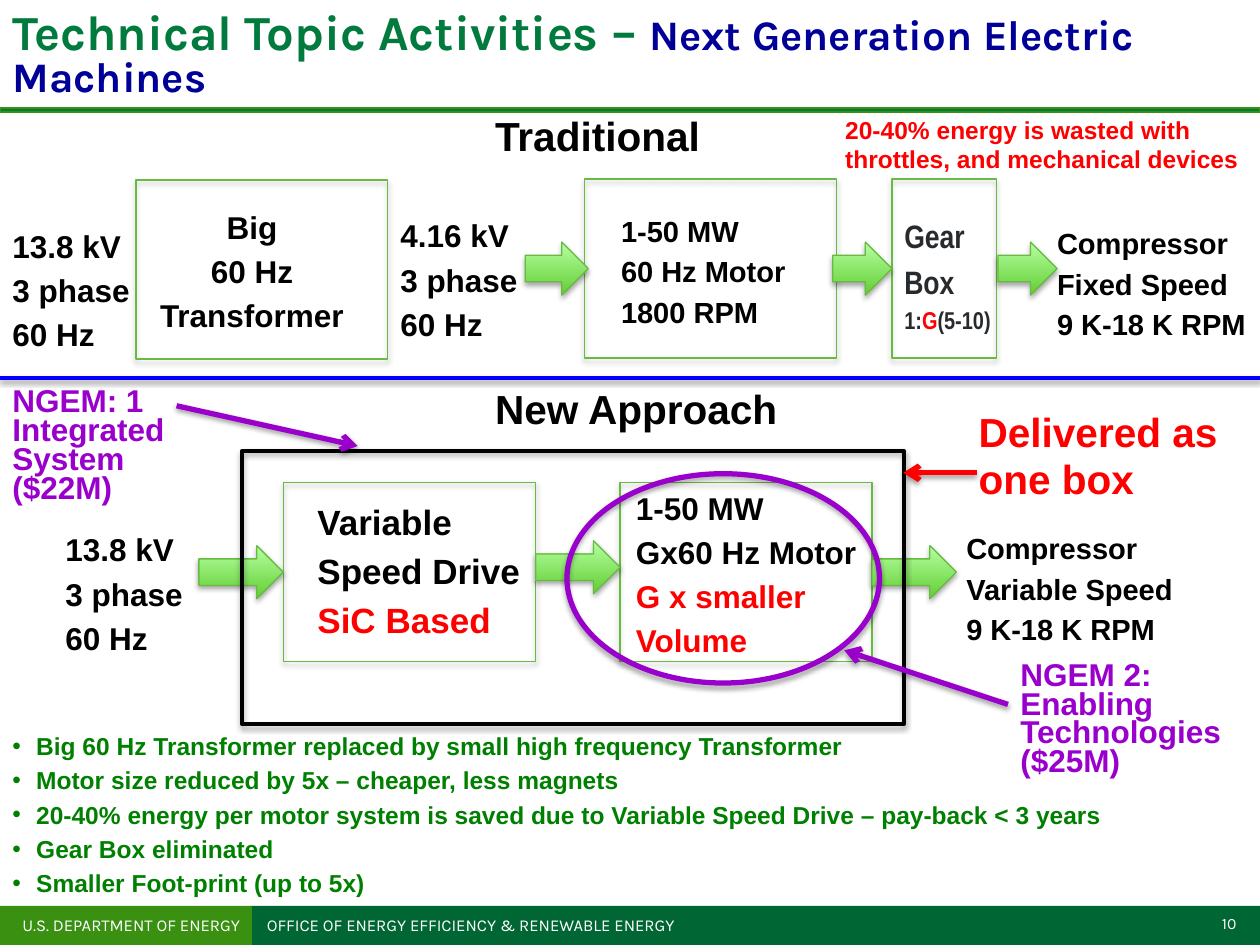
"""Build the slide that compares traditional and new electric machine drives."""
from dataclasses import dataclass
from typing import NamedTuple, Optional, Union

from lxml.etree import SubElement
from pptx import Presentation
from pptx.dml.color import RGBColor
from pptx.enum.shapes import MSO_CONNECTOR, MSO_SHAPE
from pptx.enum.text import MSO_ANCHOR, PP_ALIGN
from pptx.oxml.ns import qn
from pptx.util import Cm, Pt

BLACK = RGBColor(0x00, 0x00, 0x00)
WHITE = RGBColor(0xFF, 0xFF, 0xFF)
RED = RGBColor(0xFF, 0x00, 0x00)
BLUE = RGBColor(0x00, 0x00, 0xFF)
NAVY = RGBColor(0x00, 0x00, 0x99)
PURPLE = RGBColor(0x99, 0x00, 0xCC)
SLATE = RGBColor(0x28, 0x2B, 0x2E)
GREEN = RGBColor(0x00, 0x80, 0x00)
PINE = RGBColor(0x00, 0x66, 0x33)
JADE = RGBColor(0x01, 0x7A, 0x3E)
LEAF = RGBColor(0x3A, 0x90, 0x11)
EDGE = RGBColor(0x67, 0xBB, 0x41)
DEEP = RGBColor(0x63, 0xCE, 0x33)
PALE = RGBColor(0xB5, 0xFF, 0xA2)
GAP = 0.2


class Span(NamedTuple):
    text: str
    color: Optional[RGBColor] = None
    size: Optional[float] = None


Row = Union[str, tuple[Span, ...]]


@dataclass
class Note:
    x: float
    y: float
    w: float
    h: float
    rows: tuple[Row, ...]
    size: float = 18
    color: RGBColor = BLACK
    font: str = "Arial"
    bold: bool = True
    pitch: float = 1.0
    align: PP_ALIGN = PP_ALIGN.LEFT
    anchor: MSO_ANCHOR = MSO_ANCHOR.TOP
    wrap: bool = False
    bullet: bool = False
    tab: float = 0


@dataclass
class Form:
    x: float
    y: float
    w: float
    h: float
    kind: MSO_SHAPE = MSO_SHAPE.RECTANGLE
    fill: Optional[RGBColor] = None
    line: Optional[RGBColor] = EDGE
    width: float = 0.75
    shade: bool = True


@dataclass
class Link:
    start: tuple[float, float]
    end: tuple[float, float]
    color: RGBColor
    width: float = 3
    head: bool = True


def arrow(x: float, y: float, w: float) -> Form:
    """Describe a green flow arrow."""
    return Form(x, y, w, 1.07, MSO_SHAPE.RIGHT_ARROW)


def cast(item, dist: float, alpha: int) -> None:
    """Give a shape or connector a soft shadow below it."""
    effect = SubElement(item._element.spPr, qn("a:effectLst"))
    if alpha:
        outer = SubElement(effect, qn("a:outerShdw"), blurRad=str(Pt(3.1)), dist=str(Pt(dist)),
                           dir="5400000", algn="ctr", rotWithShape="0")
        tint = SubElement(outer, qn("a:srgbClr"), val=str(BLACK))
        SubElement(tint, qn("a:alpha"), val=str(alpha * 1000))


def draw_form(slide, form: Form) -> None:
    """Draw a box, arrow, ellipse or bar."""
    shape = slide.shapes.add_shape(form.kind, Cm(form.x), Cm(form.y), Cm(form.w), Cm(form.h))
    if form.kind == MSO_SHAPE.RIGHT_ARROW:
        shape.fill.gradient()
        shape.fill.gradient_angle = 90
        for stop, color in zip(shape.fill.gradient_stops, (DEEP, PALE)):
            stop.color.rgb = color
    elif form.fill is not None:
        shape.fill.solid()
        shape.fill.fore_color.rgb = form.fill
    else:
        shape.fill.background()
    if form.line is not None:
        shape.line.color.rgb = form.line
        shape.line.width = Pt(form.width)
    else:
        shape.line.fill.background()
    cast(shape, 1.8, 35 if form.shade else 0)


def draw_link(slide, link: Link) -> None:
    """Draw a straight line, with an arrowhead if wanted."""
    ends = [Cm(v) for v in link.start + link.end]
    line = slide.shapes.add_connector(MSO_CONNECTOR.STRAIGHT, *ends)
    line.line.color.rgb = link.color
    line.line.width = Pt(link.width)
    if link.head:
        SubElement(line.line._get_or_add_ln(), qn("a:tailEnd"), type="arrow")
    cast(line, 1.6, 38)


def draw_note(slide, note: Note) -> None:
    """Draw a text box row by row."""
    box = slide.shapes.add_textbox(Cm(note.x), Cm(note.y), Cm(note.w), Cm(note.h))
    frame = box.text_frame
    frame.word_wrap = note.wrap
    frame.vertical_anchor = note.anchor
    for i, row in enumerate(note.rows):
        para = frame.add_paragraph() if i else frame.paragraphs[0]
        props = para._p.get_or_add_pPr()
        if note.bullet:
            props.set("marL", str(Cm(0.48)))
            props.set("indent", str(-Cm(0.48)))
            SubElement(props, qn("a:buFont"), typeface=note.font)
            SubElement(props, qn("a:buChar"), char="•")
        if note.tab:
            tabs = SubElement(props, qn("a:tabLst"))
            SubElement(tabs, qn("a:tab"), pos=str(Cm(note.tab)), algn="l")
        para.alignment = note.align
        para.line_spacing = note.pitch
        spans = (Span(row),) if isinstance(row, str) else row
        if i:
            para.space_before = Pt(round(GAP * (spans[0].size or note.size), 1))
        for span in spans:
            run = para.add_run()
            run.text = span.text
            run.font.name = note.font
            run.font.bold = note.bold
            run.font.size = Pt(span.size or note.size)
            run.font.color.rgb = span.color or note.color


BARS = (
    Form(5.05, 18.26, 20.35, 0.79, fill=PINE, line=None, shade=False),
    Form(0, 18.26, 5.08, 0.79, fill=LEAF, line=None, shade=False),
    Form(0, 2.18, 25.4, 0.08, fill=JADE, line=LEAF, shade=False),
)
FLOW = (
    Form(2.74, 3.63, 5.08, 3.61), Form(11.79, 3.61, 5.08, 3.61), Form(17.98, 3.61, 2.11, 3.61),
    arrow(10.59, 4.88, 1.27), arrow(16.79, 4.88, 1.19), arrow(20.12, 4.88, 1.19),
    Form(5.72, 9.73, 5.08, 3.61), Form(12.5, 9.73, 5.08, 3.61),
    arrow(4.01, 11, 1.7), arrow(10.8, 10.9, 1.7), arrow(17.58, 11, 1.7),
    Form(4.88, 9.09, 13.34, 5.51, line=BLACK, width=2.25),
)
RING = Form(11.43, 9.55, 6.3, 4.22, MSO_SHAPE.OVAL, line=PURPLE, width=3)
LINKS = (
    Link((19.69, 9.53), (18.21, 9.53), RED),
    Link((0, 7.62), (25.4, 7.62), BLUE, 2, False),
    Link((20.32, 14.2), (17.02, 13.11), PURPLE),
    Link((3.56, 8.18), (7.21, 8.99), PURPLE),
)
GRID = ("13.8 kV", "3 phase", "60 Hz")
NOTES = (
    Note(24.16, 18.34, 1.24, 0.66, ("10",), 9, WHITE, "Karla", False, 0.9, PP_ALIGN.CENTER),
    Note(0.2, 18.31, 13.74, 0.66,
         ("U.S. DEPARTMENT OF ENERGY\tOFFICE OF ENERGY EFFICIENCY & RENEWABLE ENERGY",),
         9.5, WHITE, "Karla", False, wrap=True, tab=4.93),
    Note(0, 0.2, 25.4, 1.9, ((Span("Technical Topic Activities – "),
                              Span("Next Generation Electric Machines", NAVY, 24)),),
         28, JADE, "Karla", pitch=0.8, anchor=MSO_ANCHOR.MIDDLE, wrap=True),
    Note(0, 4.45, 3.1, 2.54, GRID),
    Note(12.27, 4.17, 4.2, 2.54, ("1-50 MW", "60 Hz Motor", "1800 RPM"), 16.6),
    Note(21.06, 4.42, 4.55, 2.54, ("Compressor", "Fixed Speed", "9 K-18 K RPM"), 16.6),
    Note(9.73, 2.11, 4.8, 1.27, ("Traditional",), 23.2),
    Note(16.79, 2.31, 8.89, 1.55,
         ("20-40% energy is wasted with", "throttles, and mechanical devices"), 14, RED, pitch=0.8),
    Note(7.82, 4.24, 3.1, 2.54, ("4.16 kV",) + GRID[1:]),
    Note(2.54, 4.06, 5.08, 2.54, ("Big", "60 Hz", "Transformer"), align=PP_ALIGN.CENTER),
    Note(17.98, 4.24, 2.54, 2.54, ("Gear", "Box", (
        Span("1:", size=13.9), Span("G", RED, 13.9), Span("(5-10)", size=13.9))),
        18.5, SLATE, "Arial Narrow"),
    Note(1.07, 10.57, 3.1, 2.54, GRID),
    Note(6.15, 9.96, 4.9, 3.2, ("Variable", "Speed Drive", (Span("SiC Based", RED),)), 20),
    Note(12.57, 9.73, 5.2, 3.45, ("1-50 MW", "Gx60 Hz Motor", (Span("G x smaller", RED),),
                                  (Span("Volume", RED),))),
    Note(19.23, 10.57, 5, 2.54, ("Compressor", "Variable Speed", "9 K-18 K RPM"), 16.6),
    Note(19.48, 8.26, 5.7, 2.54, ("Delivered as", "one box"), 23.2, RED, pitch=0.8),
    Note(9.73, 7.62, 6.5, 1.27, ("New Approach",), 23.2),
    Note(0, 14.61, 24.56, 4.55, (
        "Big 60 Hz Transformer replaced by small high frequency Transformer",
        "Motor size reduced by 5x – cheaper, less magnets",
        "20-40% energy per motor system is saved due to Variable Speed Drive – pay-back < 3 years",
        "Gear Box eliminated", "Smaller Foot-print (up to 5x)"), 14, GREEN, bullet=True),
    Note(20.32, 13.34, 4.88, 2.54, ("NGEM 2:", "Enabling", "Technologies", "($25M)"),
         color=PURPLE, pitch=0.6),
    Note(0, 7.82, 4.88, 2.54, ("NGEM: 1", "Integrated", "System", "($22M)"),
         color=PURPLE, pitch=0.6),
)


def main() -> None:
    """Draw the slide and save it."""
    deck = Presentation()
    deck.slide_width, deck.slide_height = Cm(25.4), Cm(19.05)
    slide = deck.slides.add_slide(deck.slide_layouts[6])
    for form in BARS + FLOW:
        draw_form(slide, form)
    for note in NOTES:
        draw_note(slide, note)
    draw_form(slide, RING)
    for link in LINKS:
        draw_link(slide, link)
    deck.save("out.pptx")


if __name__ == "__main__":
    main()
